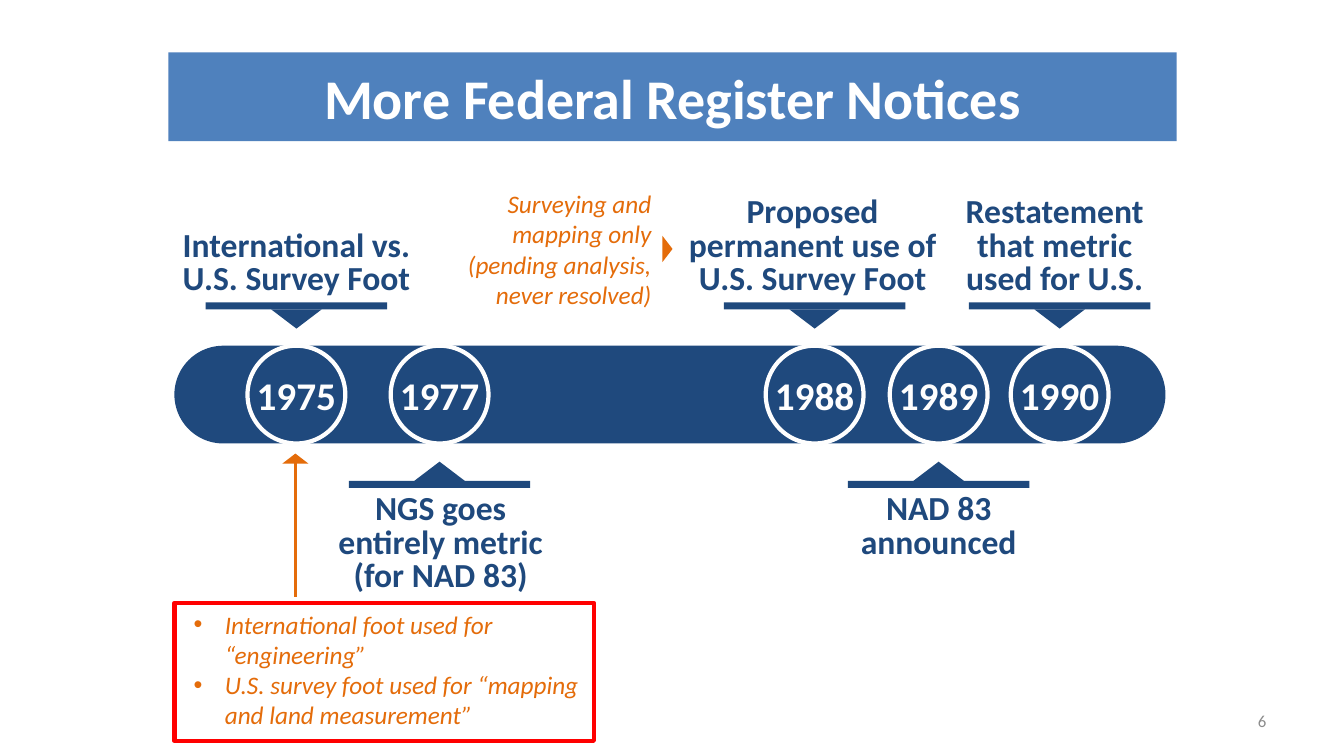
from lxml import etree
from pptx import Presentation
from pptx.dml.color import RGBColor
from pptx.enum.shapes import MSO_CONNECTOR, MSO_SHAPE
from pptx.enum.text import MSO_ANCHOR, MSO_AUTO_SIZE, PP_ALIGN
from pptx.oxml.ns import qn
from pptx.util import Inches, Pt

CENTER, RIGHT, LEFT = PP_ALIGN.CENTER, PP_ALIGN.RIGHT, PP_ALIGN.LEFT
TOP, MIDDLE, BOTTOM = MSO_ANCHOR.TOP, MSO_ANCHOR.MIDDLE, MSO_ANCHOR.BOTTOM
RECT, TRIANGLE = MSO_SHAPE.RECTANGLE, MSO_SHAPE.ISOSCELES_TRIANGLE
COLORS = {"navy": "1F497D", "blue": "4F81BD", "orange": "E46C0A", "red": "FF0000",
          "white": "FFFFFF", "ring": "FEFEFE", "gray": "8C8C8C"}
RGB = {name: RGBColor.from_string(value) for name, value in COLORS.items()}

deck = Presentation()
deck.slide_width, deck.slide_height = Inches(13.33), Inches(7.5)
slide = deck.slides.add_slide(deck.slide_layouts[1])


def add_block(kind, left, top, width, height, color):
    block = slide.shapes.add_shape(kind, Inches(left), Inches(top), Inches(width), Inches(height))
    block.shadow.inherit = False
    block.fill.solid()
    block.fill.fore_color.rgb = RGB[color]
    block.line.fill.background()
    return block


def write(holder, text, size, color, align=CENTER, anchor=TOP, bold=False, italic=False, wrap=True):
    frame = holder.text_frame
    frame.text = text
    frame.word_wrap = wrap
    frame.auto_size = MSO_AUTO_SIZE.NONE
    frame.vertical_anchor = anchor
    for paragraph in frame.paragraphs:
        paragraph.alignment = align
        for run in paragraph.runs:
            run.font.name, run.font.size = "Calibri", Pt(size)
            run.font.bold, run.font.italic = bold, italic
            run.font.color.rgb = RGB[color]
    return frame


# Title band
title = slide.shapes.title
title.left, title.top, title.width, title.height = map(Inches, (1.67, 0.52, 10, 0.88))
title.fill.solid()
title.fill.fore_color.rgb = RGB["blue"]
write(title, "More Federal Register Notices", 40, "white", anchor=MIDDLE, bold=True)

# Timeline bar
BAR_TOP, BAR_HEIGHT = 3.43, 0.97
bar = add_block(MSO_SHAPE.ROUNDED_RECTANGLE, 1.73, BAR_TOP, 9.83, BAR_HEIGHT, "navy")
bar.adjustments[0] = 0.5

# Events: year, centre, label, label centre, label width, above the bar
events = [
    ("1975", 2.94, "International vs. U.S. Survey Foot", 2.94, 2.7, True),
    ("1977", 4.36, "NGS goes entirely metric (for NAD 83)", 4.37, 2.52, False),
    ("1988", 8.08, "Proposed permanent use of U.S. Survey Foot", 8.06, 2.7, True),
    ("1989", 9.31, "NAD 83 announced", 9.31, 2.29, False),
    ("1990", 10.51, "Restatement that metric used for U.S.", 10.46, 2.27, True),
]
LABEL_HEIGHT = 1.12
for year, center, label, label_center, label_width, above in events:
    circle = add_block(MSO_SHAPE.OVAL, center - BAR_HEIGHT / 2, BAR_TOP,
                       BAR_HEIGHT, BAR_HEIGHT, "navy")
    circle.line.color.rgb = RGB["ring"]
    circle.line.width = Pt(3)
    write(circle, year, 28, "ring", anchor=MIDDLE, bold=True, wrap=False)

    rule_top = 3.0 if above else 4.77
    pointer = add_block(TRIANGLE, center - 0.25, 3.07 if above else 4.58, 0.5, 0.19, "navy")
    pointer.rotation = 180 if above else 0
    add_block(RECT, center - 0.9, rule_top, 1.8, 0.07, "navy")

    label_top = rule_top - LABEL_HEIGHT if above else 4.85
    label_box = slide.shapes.add_textbox(
        Inches(label_center - label_width / 2), Inches(label_top),
        Inches(label_width), Inches(LABEL_HEIGHT))
    label_frame = write(label_box, label, 24, "navy", anchor=BOTTOM if above else TOP, bold=True)
    label_frame.paragraphs[0].line_spacing = Pt(24)

# Remark beside the 1988 proposal
remark = slide.shapes.add_textbox(Inches(4.52), Inches(1.82), Inches(2.04), Inches(1.31))
write(remark, "Surveying and mapping only (pending analysis, never resolved)", 18, "orange",
      align=RIGHT, italic=True)
remark_pointer = add_block(TRIANGLE, 6.49, 2.42, 0.26, 0.1, "orange")
remark_pointer.rotation = 90

# Arrow from the 1975 details up to the year
stem = slide.shapes.add_connector(MSO_CONNECTOR.STRAIGHT, Inches(2.93), Inches(5.92),
                                  Inches(2.93), Inches(4.55))
stem.line.color.rgb = RGB["orange"]
stem.line.width = Pt(2)
etree.SubElement(stem._element.spPr, qn("a:effectLst"))
add_block(TRIANGLE, 2.8, 4.5, 0.26, 0.1, "orange")

# Details of the 1975 notice
details = slide.placeholders[1]
details.left, details.top, details.width, details.height = map(Inches, (1.73, 5.98, 4.16, 1.37))
details.line.color.rgb = RGB["red"]
details.line.width = Pt(3)
details_frame = write(details, "International foot used for “engineering”\n"
                      "U.S. survey foot used for “mapping and land measurement”",
                      18, "orange", align=LEFT, italic=True)
details_frame.margin_left, details_frame.margin_top = Inches(0.19), Inches(0.06)
for detail in details_frame.paragraphs:
    detail.space_before = Pt(0)
    properties = detail._p.get_or_add_pPr()
    properties.set("marL", str(Inches(0.31)))
    properties.set("indent", str(-Inches(0.31)))
    etree.SubElement(properties, qn("a:buFont"), typeface="Arial")
    etree.SubElement(properties, qn("a:buChar"), char="•")

# Slide number
number = slide.shapes.add_textbox(Inches(11.33), Inches(7), Inches(1.33), Inches(0.3))
write(number, "6", 12, "gray", align=RIGHT, anchor=MIDDLE)

deck.save("out.pptx")
